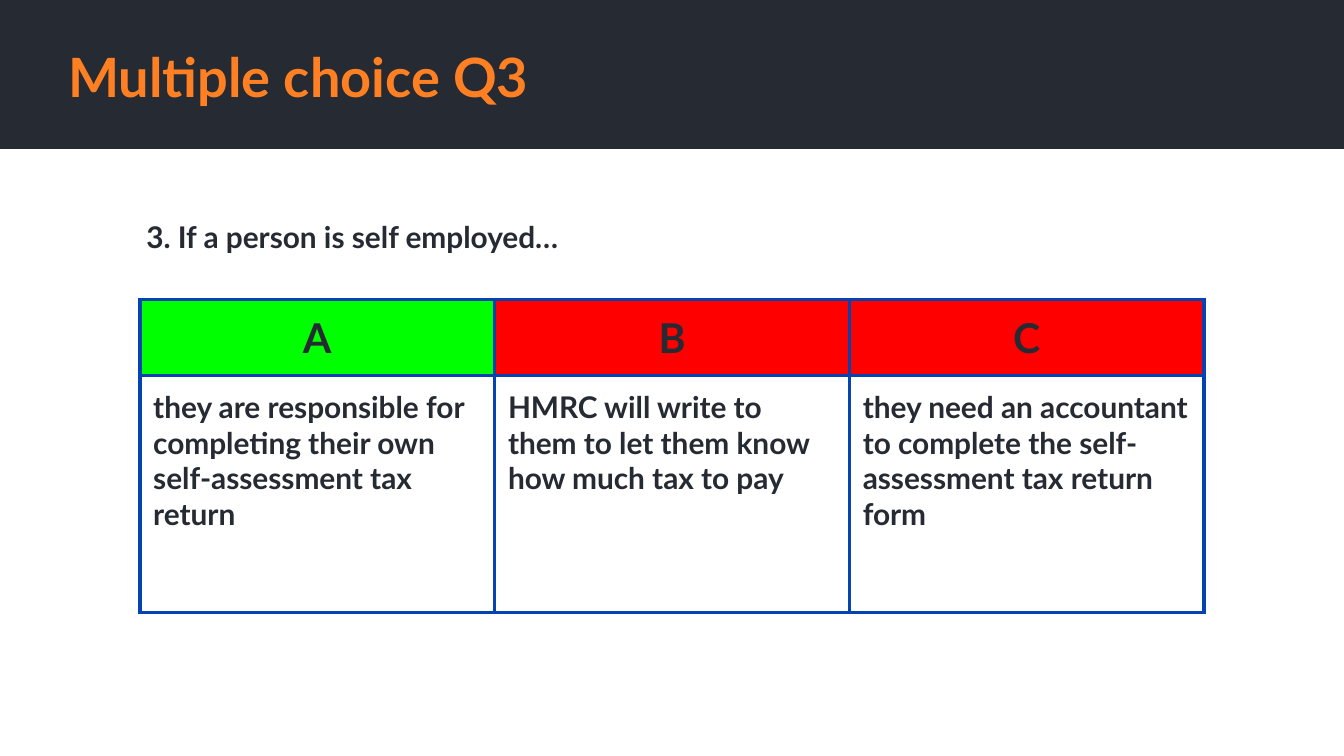
import pptx
import pptx.dml.color
import pptx.enum.shapes
import pptx.enum.text
import pptx.oxml
import pptx.oxml.ns
import pptx.util
import lxml.etree

WIDTH = 10
HEIGHT = WIDTH * 9 / 16
INSET = 0.1
FONT = "Lato"
COLORS = {
    "dark": "262A33",
    "title": "FF8022",
    "border": "0543B3",
    "correct": "00FF00",
    "wrong": "FF0000",
}
ANSWERS = [
    ("A", "correct", "they are responsible for completing their own self-assessment tax return"),
    ("B", "wrong", "HMRC will write to them to let them know how much tax to pay"),
    ("C", "wrong", "they need an accountant to complete the self-assessment tax return form"),
]


def color(name):
    return pptx.dml.color.RGBColor.from_string(COLORS[name])


def box(left, top, width, height):
    """Turn percentages of the slide's size into lengths."""
    return [
        pptx.util.Inches(percent * size / 100)
        for percent, size in zip((left, top, width, height), (WIDTH, HEIGHT) * 2)
    ]


def write(frame, text, size=16, color_name="dark", align="LEFT"):
    paragraph = frame.paragraphs[0]
    paragraph.alignment = getattr(pptx.enum.text.PP_ALIGN, align)
    run = paragraph.add_run()
    run.text = text
    run.font.name = FONT
    run.font.size = pptx.util.Pt(size)
    run.font.bold = True
    run.font.color.rgb = color(color_name)


def set_insets(holder):
    for side in ("left", "right", "top", "bottom"):
        setattr(holder, f"margin_{side}", pptx.util.Inches(INSET))


def add_band(slide, area):
    shape = slide.shapes.add_shape(pptx.enum.shapes.MSO_SHAPE.RECTANGLE, *box(*area))
    shape.shadow.inherit = False
    shape.fill.solid()
    shape.fill.fore_color.rgb = color("dark")
    shape.line.fill.background()


def add_text(slide, area, text, anchor="TOP", **text_format):
    frame = slide.shapes.add_textbox(*box(*area)).text_frame
    frame.word_wrap = True
    frame.vertical_anchor = getattr(pptx.enum.text.MSO_ANCHOR, anchor)
    set_insets(frame)
    write(frame, text, **text_format)


def add_borders(cell, width=2.25):
    properties = cell._tc.get_or_add_tcPr()
    for position, side in enumerate(("lnL", "lnR", "lnT", "lnB")):
        line = lxml.etree.Element(
            pptx.oxml.ns.qn(f"a:{side}"), w=str(pptx.util.Pt(width))
        )
        fill = lxml.etree.SubElement(line, pptx.oxml.ns.qn("a:solidFill"))
        lxml.etree.SubElement(fill, pptx.oxml.ns.qn("a:srgbClr"), val=COLORS["border"])
        properties.insert(position, line)


def fill_cell(cell, text, fill_name=None, **text_format):
    set_insets(cell)
    if fill_name:
        cell.fill.solid()
        cell.fill.fore_color.rgb = color(fill_name)
    else:
        cell.fill.background()
    add_borders(cell)
    write(cell.text_frame, text, **text_format)


def add_answer_table(slide, area, header_percent):
    left, top, width, height = box(*area)
    table = slide.shapes.add_table(2, len(ANSWERS), left, top, width, height).table
    table.first_row = table.horz_banding = False
    table.rows[0].height = int(height * header_percent / 100)
    table.rows[1].height = height - table.rows[0].height
    for column, (letter, verdict, answer) in enumerate(ANSWERS):
        fill_cell(table.cell(0, column), letter, verdict, size=22, align="CENTER")
        fill_cell(table.cell(1, column), answer)


def main():
    presentation = pptx.Presentation()
    presentation.slide_width = pptx.util.Inches(WIDTH)
    presentation.slide_height = pptx.util.Inches(HEIGHT)
    slide = presentation.slides.add_slide(presentation.slide_layouts[6])

    add_band(slide, (0, 0, 100, 19.7))
    add_text(slide, (4.1, 5, 87.4, 10), "Multiple choice Q3",
             anchor="MIDDLE", size=29, color_name="title")
    add_answer_table(slide, (10.4, 39.6, 79.2, 41.4), header_percent=24.3)
    add_text(slide, (9.9, 27.2, 83.8, 8.4), "3. If a person is self employed…")
    presentation.save("out.pptx")


if __name__ == "__main__":
    main()
